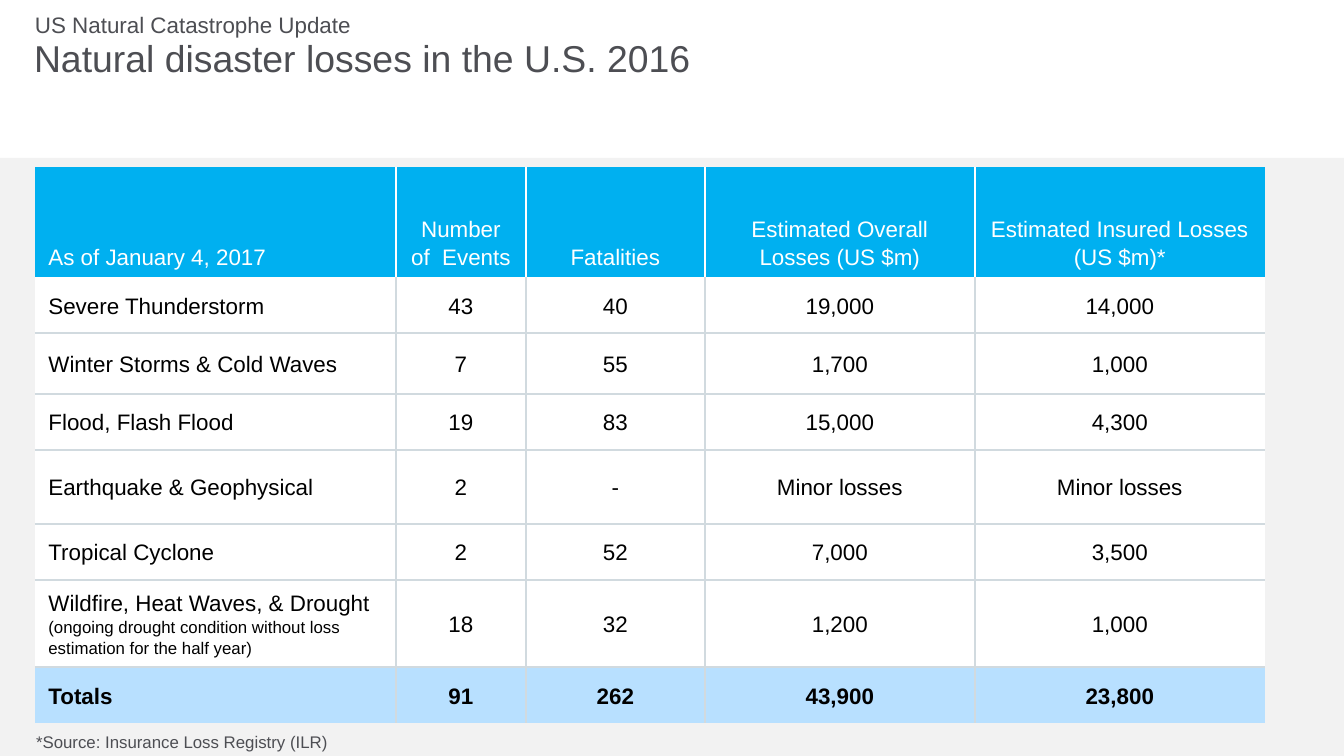
from pptx import Presentation
from pptx.dml.color import RGBColor
from pptx.enum.shapes import MSO_SHAPE as Shape
from pptx.enum.text import MSO_ANCHOR as Anchor, PP_ALIGN as Align
from pptx.oxml import parse_xml
from pptx.oxml.ns import nsdecls
from pptx.util import Pt

# Content
TITLE = "Natural disaster losses in the U.S. 2016"
TOPIC = "US Natural Catastrophe Update"
SOURCE = "*Source: Insurance Loss Registry (ILR)"
HEADER = ["As of January 4, 2017", "Number of  Events", "Fatalities",
          "Estimated Overall Losses (US $m)", "Estimated Insured Losses (US $m)*"]
LOSSES = [
    ["Severe Thunderstorm", "43", "40", "19,000", "14,000"],
    ["Winter Storms & Cold Waves", "7", "55", "1,700", "1,000"],
    ["Flood, Flash Flood", "19", "83", "15,000", "4,300"],
    ["Earthquake & Geophysical", "2", "-", "Minor losses", "Minor losses"],
    ["Tropical Cyclone", "2", "52", "7,000", "3,500"],
    ["Wildfire, Heat Waves, & Drought ", "18", "32", "1,200", "1,000"],
]
DROUGHT_NOTE = "(ongoing drought condition without loss estimation for the half year)"
DROUGHT_ROW = 6
TOTALS = ["Totals", "91", "262", "43,900", "23,800"]

# Look
COLORS = {"panel": "F2F2F2", "gray": "4D4E53", "header": "00B0F0", "white": "FFFFFF",
          "black": "000000", "totals": "B8E0FF", "rule": "D1DADF"}
FONT = "Arial"
COLUMN_WIDTHS = [361, 130, 179, 270, 290]
ROW_HEIGHTS = [110, 56, 61, 56, 74, 56, 77, 56]


def px(count):
    return round(count * 914400 / 134.4)


def color(name):
    return RGBColor.from_string(COLORS[name])


def style(span, size, name, bold=False):
    span.font.name = FONT
    span.font.size = Pt(size)
    span.font.bold = bold
    span.font.color.rgb = color(name)


def add_text(page, text, size, place, margins, wrap=False):
    box = page.shapes.add_textbox(*map(px, place))
    frame = box.text_frame
    frame.word_wrap = wrap
    frame.margin_left = frame.margin_right = px(margins[0])
    frame.margin_top = frame.margin_bottom = px(margins[1])
    frame.text = text
    style(frame.paragraphs[0].runs[0], size, "gray")


def set_borders(cell, borders):
    """Draw each side in the named colour, or leave it bare for None."""
    properties = cell._tc.get_or_add_tcPr()
    for side, name in borders.items():
        paint = (f'<a:solidFill><a:srgbClr val="{COLORS[name]}"/></a:solidFill>'
                 if name else "<a:noFill/>")
        properties.append(parse_xml(
            f'<a:ln{side} {nsdecls("a")} w="{Pt(1)}">{paint}</a:ln{side}>'))


deck = Presentation()
deck.slide_width, deck.slide_height = px(1344), px(756)
page = deck.slides.add_slide(deck.slide_layouts[6])

# Gray panel behind the table
panel = page.shapes.add_shape(Shape.RECTANGLE, 0, px(158), px(1344), px(598))
panel.shadow.inherit = False
panel.fill.solid()
panel.fill.fore_color.rgb = color("panel")
panel.line.fill.background()

# Title
add_text(page, TITLE, 20, (34, 35, 1005, 79), (0, 0), wrap=True)

# Table of losses
rows = [HEADER, *LOSSES, TOTALS]
last_row, last_column = len(rows) - 1, len(HEADER) - 1
table = page.shapes.add_table(len(rows), len(HEADER), px(35), px(167),
                              px(sum(COLUMN_WIDTHS)), px(sum(ROW_HEIGHTS))).table
table.first_row = table.horz_banding = False
for column, width in zip(table.columns, COLUMN_WIDTHS):
    column.width = px(width)
for row, height in zip(table.rows, ROW_HEIGHTS):
    row.height = px(height)

for r, values in enumerate(rows):
    is_header, is_total = r == 0, r == last_row
    fill = "header" if is_header else "totals" if is_total else "white"
    ink = "white" if is_header else "black"
    upright = "white" if is_header else "rule"
    for c, value in enumerate(values):
        cell = table.cell(r, c)
        set_borders(cell, {
            "L": upright if c > 0 else None,
            "R": upright if c < last_column else None,
            "T": "rule" if r > 1 else None,
            "B": "rule" if 0 < r < last_row else None,
        })
        cell.fill.solid()
        cell.fill.fore_color.rgb = color(fill)
        cell.vertical_anchor = Anchor.BOTTOM if is_header else Anchor.MIDDLE
        cell.text_frame.text = value
        para = cell.text_frame.paragraphs[0]
        para.alignment = Align.CENTER if c else Align.LEFT
        para.line_spacing = 1.1
        style(para.runs[0], 12, ink, is_total)

note = table.cell(DROUGHT_ROW, 0).text_frame.paragraphs[0].add_run()
note.text = DROUGHT_NOTE
style(note, 9, "black")

# Topic line and source
add_text(page, TOPIC, 12, (35, 4, 319, 40), (0, 7))
add_text(page, SOURCE, 9, (23, 725, 335, 33), (13, 7))

deck.save("out.pptx")
